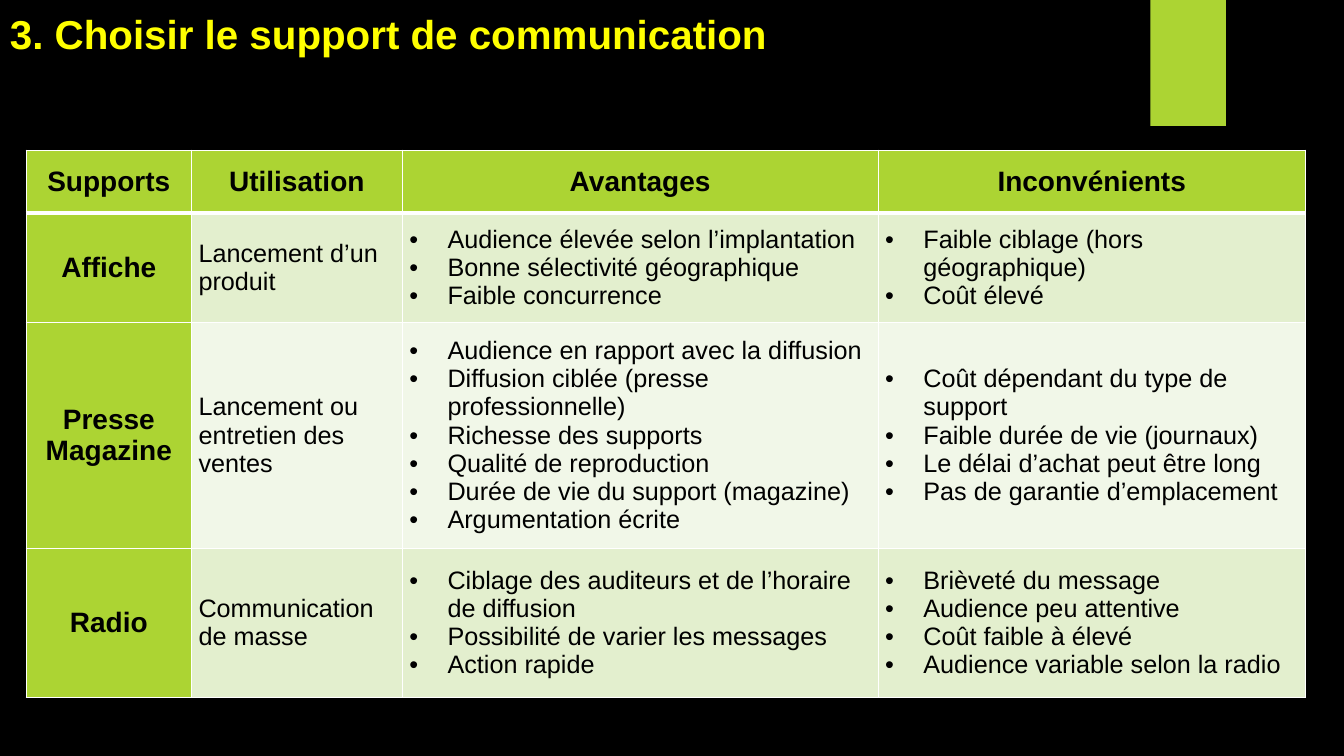
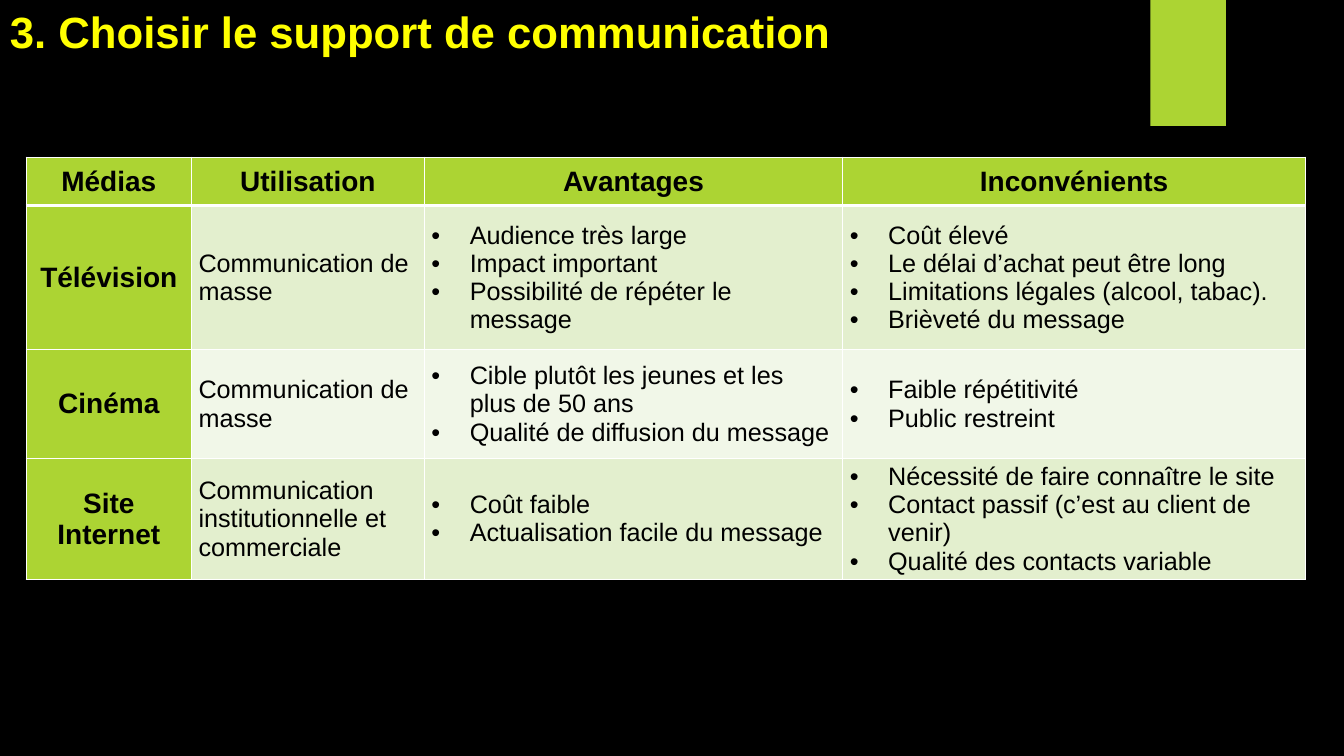
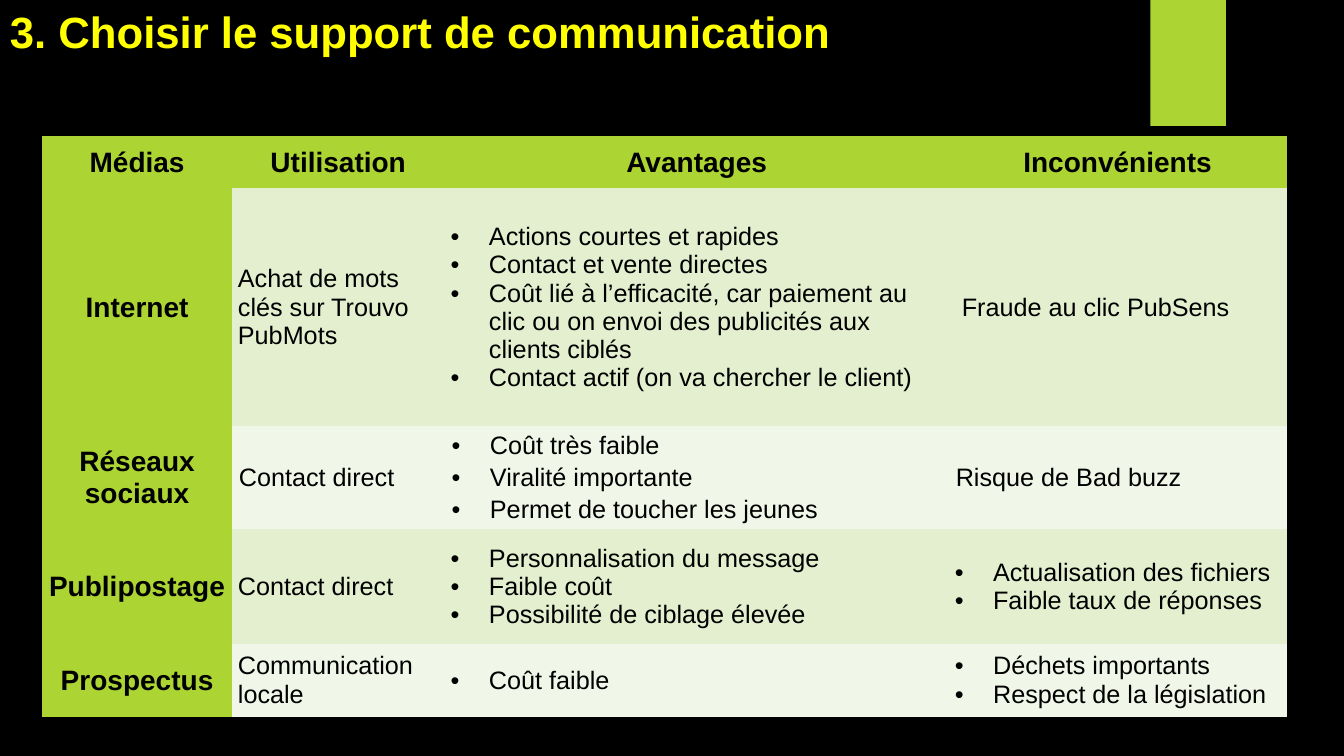
import dataclasses

import lxml.etree
import pptx
import pptx.dml.color
import pptx.enum.shapes
import pptx.enum.text
import pptx.oxml.ns
import pptx.util

Inches = pptx.util.Inches
Pt = pptx.util.Pt
qn = pptx.oxml.ns.qn
Align = pptx.enum.text.PP_ALIGN
Anchor = pptx.enum.text.MSO_ANCHOR

TITLE = "3. Choisir le support de communication"
NO_STYLE = "{2D5ABB26-0587-4C30-8999-92F81FD0307C}"


@dataclasses.dataclass(frozen=True)
class Theme:
    font: str = "Arial"
    back: str = "000000"
    ink: str = "000000"
    title: str = "FFFF00"
    green: str = "ACD433"
    bands: tuple = ("F1F7E8", "E3EFCE")
    rule: str = "FFFFFF"
    head: float = 20
    body: float = 18


THEME = Theme()


def color(code):
    return pptx.dml.color.RGBColor.from_string(code)


def write(frame, text, size=THEME.body, ink=THEME.ink, bold=False,
          align=Align.LEFT, bullet=False, gap=0, shift=0):
    """Fill a text frame, one paragraph for each line of text."""
    frame.word_wrap = True
    for i, line in enumerate(text.split("\n")):
        para = frame.paragraphs[0] if i == 0 else frame.add_paragraph()
        props = para._p.get_or_add_pPr()
        if bullet:
            props.set("marL", str(Inches(0.38)))
            props.set("indent", str(-Inches(0.38)))
            lxml.etree.SubElement(props, qn("a:buFont"), typeface="Arial")
            lxml.etree.SubElement(props, qn("a:buChar"), char="•")
        elif shift:
            props.set("marL", str(Inches(shift)))
        para.alignment = align
        if gap and i:
            para.space_before = Pt(gap)
        run = para.add_run()
        run.text = line
        run.font.name = THEME.font
        run.font.size = Pt(size)
        run.font.bold = bold
        run.font.color.rgb = color(ink)


def border(cell, **sides):
    """Draw cell borders; sides are L, R, T, B with widths in points."""
    props = cell._tc.get_or_add_tcPr()
    for side in "LRTB":
        line = lxml.etree.SubElement(props, qn("a:ln" + side), w=str(Pt(sides[side])))
        fill = lxml.etree.SubElement(line, qn("a:solidFill"))
        lxml.etree.SubElement(fill, qn("a:srgbClr"), val=THEME.rule)


class Deck:
    def __init__(self):
        self.file = pptx.Presentation()
        self.file.slide_width = Inches(13.33)
        self.file.slide_height = Inches(7.5)
        self.slide = None

    def page(self, size):
        """Start a slide with its background, green tab and title."""
        self.slide = self.file.slides.add_slide(self.file.slide_layouts[6])
        fill = self.slide.background.fill
        fill.solid()
        fill.fore_color.rgb = color(THEME.back)
        self.tab()
        self.title(size)

    def tab(self):
        tab = self.slide.shapes.add_shape(
            pptx.enum.shapes.MSO_SHAPE.RECTANGLE,
            Inches(11.41), 0, Inches(0.75), Inches(1.25))
        tab.shadow.inherit = False
        tab.fill.solid()
        tab.fill.fore_color.rgb = color(THEME.green)
        tab.line.fill.background()

    def title(self, size):
        box = self.slide.shapes.add_textbox(0, 0, Inches(12.95), Inches(0.62))
        box.text_frame.vertical_anchor = Anchor.BOTTOM
        write(box.text_frame, TITLE, size=size, ink=THEME.title, bold=True)

    def table(self, left, top, widths, heights, rows, inset=0.07, ruled=True):
        """Rows hold cell texts; a list is bulleted, a last dict sets format."""
        frame = self.slide.shapes.add_table(
            len(heights), len(widths), Inches(left), Inches(top),
            Inches(sum(widths)), Inches(sum(heights)))
        grid = frame.table
        grid._tbl.tblPr.find(qn("a:tableStyleId")).text = NO_STYLE
        for col, width in zip(grid.columns, widths):
            col.width = Inches(width)
        for row, height in zip(grid.rows, heights):
            row.height = Inches(height)
        for r, row in enumerate(rows):
            *items, last = row
            style = last if isinstance(last, dict) else {}
            items = items if style else row
            for c, item in enumerate(items):
                cell = grid.cell(r, c)
                if ruled:
                    border(cell, L=1, R=1, T=3 if r == 1 else 1, B=3 if r == 0 else 1)
                self.cell(cell, item, r == 0 or c == 0, THEME.bands[r % 2],
                          style.get("inset", inset), style.get("gap", 0),
                          style.get("shift", 0) if c == 3 else 0)

    def cell(self, cell, item, head, band, inset, gap, shift):
        cell.margin_left = cell.margin_right = Inches(inset)
        cell.margin_top = cell.margin_bottom = 0
        cell.vertical_anchor = Anchor.MIDDLE
        cell.fill.solid()
        cell.fill.fore_color.rgb = color(THEME.green if head else band)
        if head:
            write(cell.text_frame, item, size=THEME.head, bold=True, align=Align.CENTER)
        elif isinstance(item, list):
            write(cell.text_frame, "\n".join(item), bullet=True, gap=gap)
        else:
            write(cell.text_frame, item, shift=shift)


def header(first):
    return [first, "Utilisation", "Avantages", "Inconvénients"]


PRINT = [
    header("Supports"),
    ["Affiche", "Lancement d’un produit",
     ["Audience élevée selon l’implantation", "Bonne sélectivité géographique",
      "Faible concurrence"],
     ["Faible ciblage (hors géographique)", "Coût élevé"]],
    ["Presse\nMagazine", "Lancement ou entretien des ventes",
     ["Audience en rapport avec la diffusion",
      "Diffusion ciblée (presse professionnelle)", "Richesse des supports",
      "Qualité de reproduction", "Durée de vie du support (magazine)",
      "Argumentation écrite"],
     ["Coût dépendant du type de support", "Faible durée de vie (journaux)",
      "Le délai d’achat peut être long", "Pas de garantie d’emplacement"]],
    ["Radio", "Communication de masse",
     ["Ciblage des auditeurs et de l’horaire de diffusion",
      "Possibilité de varier les messages", "Action rapide"],
     ["Brièveté du message", "Audience peu attentive", "Coût faible à élevé",
      "Audience variable selon la radio"]],
]

SCREEN = [
    header("Médias"),
    ["Télévision", "Communication de masse",
     ["Audience très large", "Impact important", "Possibilité de répéter le message"],
     ["Coût élevé", "Le délai d’achat peut être long",
      "Limitations légales (alcool, tabac).", "Brièveté du message"]],
    ["Cinéma", "Communication de masse",
     ["Cible plutôt les jeunes et les plus de 50 ans",
      "Qualité de diffusion du message"],
     ["Faible répétitivité", "Public restreint"]],
    ["Site Internet", "Communication institutionnelle et commerciale",
     ["Coût faible", "Actualisation facile du message"],
     ["Nécessité de faire connaître le site",
      "Contact passif (c’est au client de venir)",
      "Qualité des contacts variable"]],
]

DIRECT = [
    header("Médias"),
    ["Internet", "Achat de mots clés sur Trouvo PubMots",
     ["Actions courtes et rapides", "Contact et vente directes",
      "Coût lié à l’efficacité, car paiement au clic ou on envoi des publicités "
      "aux clients ciblés",
      "Contact actif (on va chercher le client)"],
     "Fraude au clic PubSens", {"shift": 0.07}],
    ["Réseaux sociaux", "Contact direct",
     ["Coût très faible", "Viralité importante", "Permet de toucher les jeunes"],
     "Risque de Bad buzz", {"gap": 3, "inset": 0.07}],
    ["Publipostage", "Contact direct",
     ["Personnalisation du message", "Faible coût", "Possibilité de ciblage élevée"],
     ["Actualisation des fichiers", "Faible taux de réponses"]],
    ["Prospectus", "Communication locale",
     ["Coût faible"],
     ["Déchets importants", "Respect de la législation"]],
]


def main():
    deck = Deck()
    deck.page(28.8)
    deck.table(0.26, 1.49, [1.64, 2.09, 4.72, 4.24], [0.62, 1.09, 2.24, 1.48], PRINT)
    deck.page(31.2)
    deck.table(0.26, 1.56, [1.64, 2.31, 4.15, 4.59], [0.48, 1.43, 1.08, 1.12], SCREEN)
    deck.page(31.2)
    deck.table(0.42, 1.35, [1.88, 2.11, 5, 3.35], [0.52, 2.36, 1.02, 1.14, 0.72],
               DIRECT, inset=0.06, ruled=False)
    deck.file.save("out.pptx")


if __name__ == "__main__":
    main()
